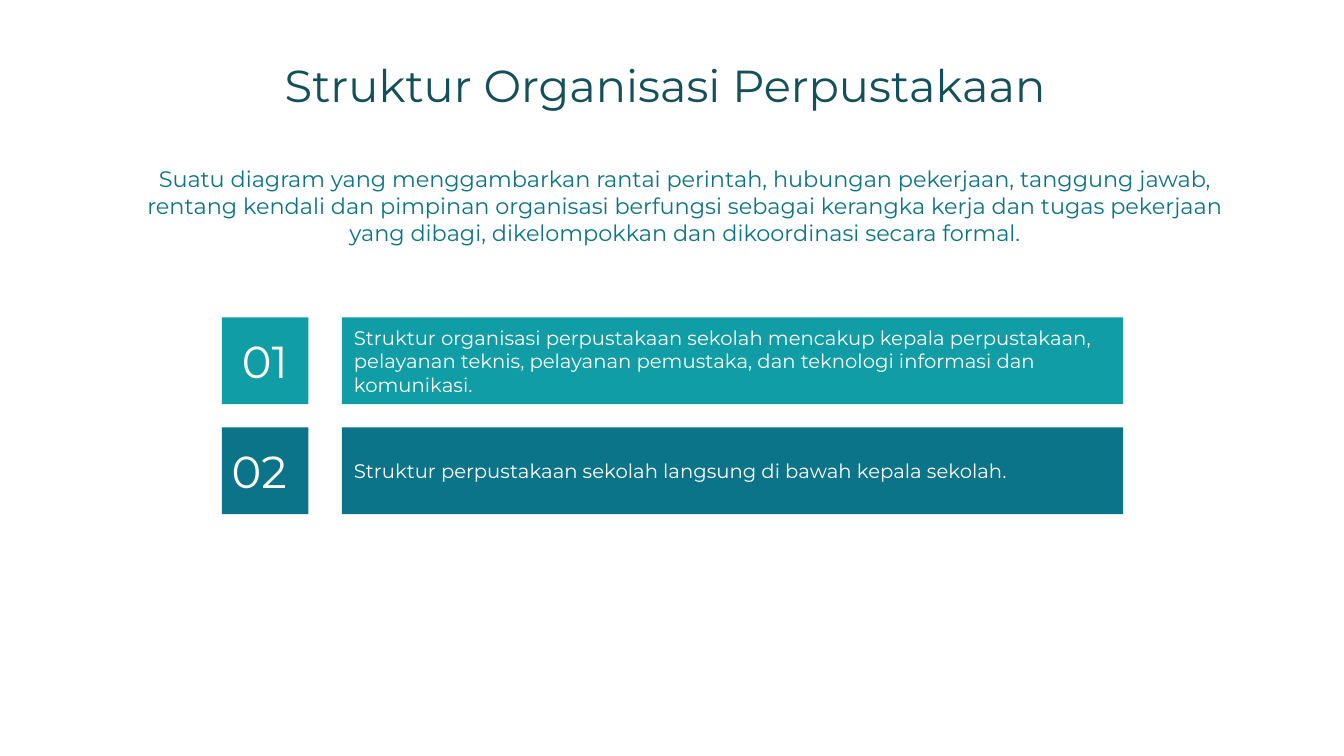
"""Build the library organisation structure slide."""
from dataclasses import dataclass

from pptx import Presentation
from pptx.dml.color import RGBColor
from pptx.enum.shapes import MSO_SHAPE
from pptx.enum.text import MSO_ANCHOR, PP_ALIGN
from pptx.oxml import parse_xml
from pptx.oxml.ns import nsdecls
from pptx.util import Inches, Pt

TITLE = "Struktur Organisasi Perpustakaan"
DEFINITION = (
    "Suatu diagram yang menggambarkan rantai perintah, hubungan pekerjaan, "
    "tanggung jawab, rentang kendali dan pimpinan organisasi berfungsi sebagai "
    "kerangka kerja dan tugas pekerjaan yang dibagi, dikelompokkan dan "
    "dikoordinasi secara formal."
)
POINTS = [
    {
        "number": "01",
        "text": "Struktur organisasi perpustakaan sekolah mencakup kepala "
        "perpustakaan, pelayanan teknis, pelayanan pemustaka, dan teknologi "
        "informasi dan komunikasi.",
        "fill": "109DA6",
        "number_inset": 0.2,
    },
    {
        "number": "02",
        "text": "Struktur perpustakaan sekolah langsung di bawah kepala sekolah.",
        "fill": "0B7489",
        "number_inset": 0.1,
    },
]


@dataclass(frozen=True)
class Theme:
    font: str = "Montserrat"
    title_color: str = "14505B"
    body_color: str = "0B7489"
    light: str = "FFFFFF"
    large: int = 32
    medium: int = 16
    small: int = 14


THEME = Theme()
FIRST_TOP, ROW_STEP, ROW_HEIGHT = 3.15, 1.09, 0.86
NUMBER_LEFT, TEXT_LEFT, TEXT_WIDTH = 2.2, 3.39, 7.75


def place(shape, left, top, width, height):
    shape.left, shape.top = Inches(left), Inches(top)
    shape.width, shape.height = Inches(width), Inches(height)


def write(shape, text, *, size, color, align=PP_ALIGN.LEFT,
          anchor=MSO_ANCHOR.MIDDLE, left_inset=0.1, right_inset=0.1):
    frame = shape.text_frame
    frame.word_wrap = True
    frame.vertical_anchor = anchor
    frame.margin_left, frame.margin_right = Inches(left_inset), Inches(right_inset)
    frame.margin_top = frame.margin_bottom = Inches(0.05)
    frame.text = text
    paragraph = frame.paragraphs[0]
    paragraph.alignment = align
    paragraph.space_before = Pt(0)
    properties = paragraph._p.get_or_add_pPr()
    properties.set("marL", "0")
    properties.set("indent", "0")
    properties.append(parse_xml(f"<a:buNone {nsdecls('a')}/>"))
    paragraph.font.name = THEME.font
    paragraph.font.size = Pt(size)
    paragraph.font.color.rgb = RGBColor.from_string(color)


def add_block(slide, left, top, width, fill):
    shape = slide.shapes.add_shape(
        MSO_SHAPE.RECTANGLE, Inches(left), Inches(top), Inches(width), Inches(ROW_HEIGHT))
    shape.shadow.inherit = False
    shape.fill.solid()
    shape.fill.fore_color.rgb = RGBColor.from_string(fill)
    shape.line.fill.background()
    return shape


def main():
    presentation = Presentation()
    presentation.slide_width, presentation.slide_height = Inches(13.33), Inches(7.5)
    slide = presentation.slides.add_slide(presentation.slide_layouts[1])

    title, definition = slide.placeholders
    place(title, 2.33, 0.52, 8.54, 0.64)
    write(title, TITLE, size=THEME.large, color=THEME.title_color, align=PP_ALIGN.CENTER)
    place(definition, 1.35, 1.59, 10.89, 1.18)
    write(definition, DEFINITION, size=THEME.medium, color=THEME.body_color,
          align=PP_ALIGN.CENTER, anchor=MSO_ANCHOR.TOP)

    for row, point in enumerate(POINTS):
        top = FIRST_TOP + row * ROW_STEP
        number = add_block(slide, NUMBER_LEFT, top, ROW_HEIGHT, point["fill"])
        write(number, point["number"], size=THEME.large, color=THEME.light,
              left_inset=point["number_inset"])
        block = add_block(slide, TEXT_LEFT, top, TEXT_WIDTH, point["fill"])
        write(block, point["text"], size=THEME.small, color=THEME.light,
              left_inset=0.12, right_inset=0.08)

    presentation.save("out.pptx")


if __name__ == "__main__":
    main()
